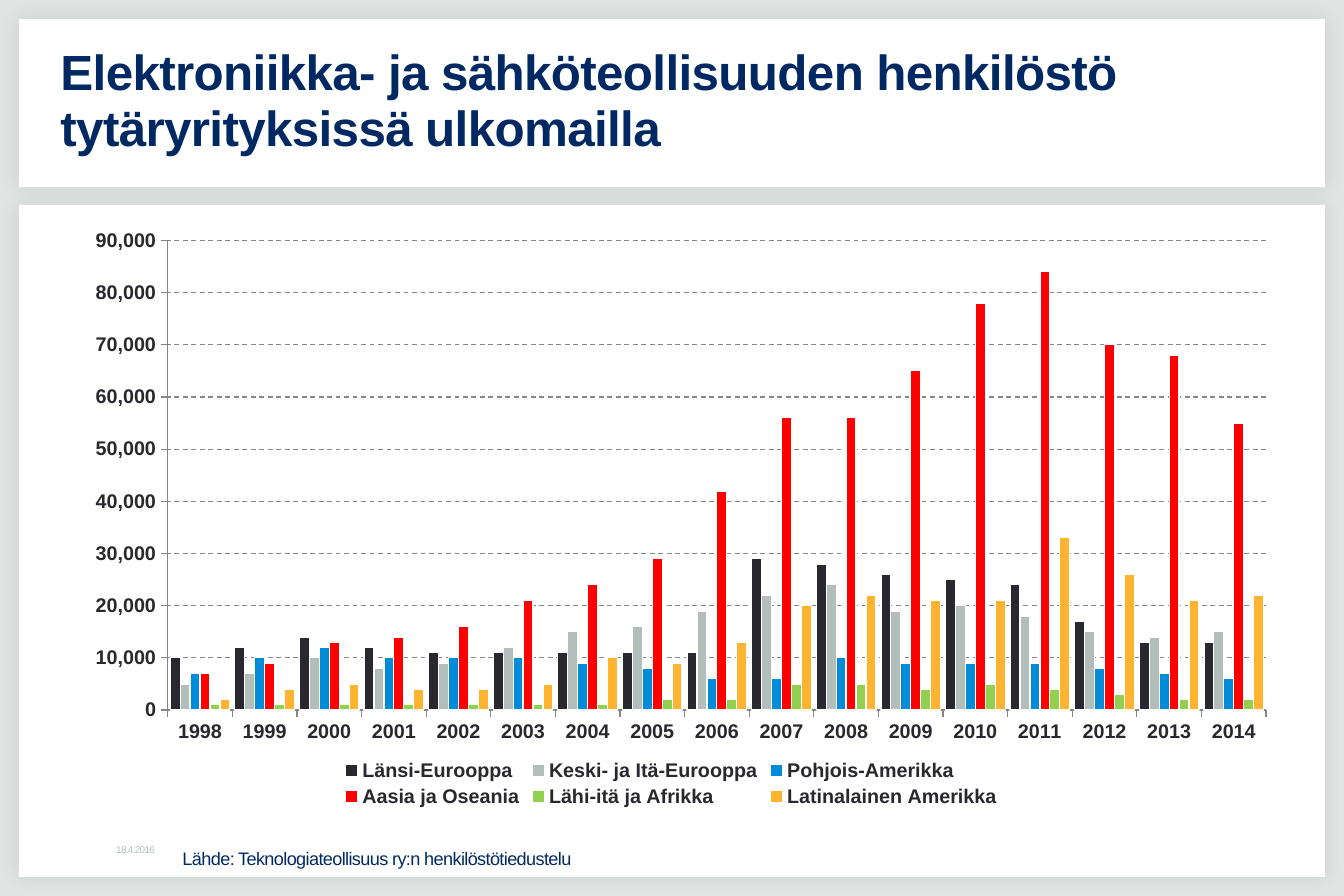
from dataclasses import dataclass

from lxml import etree
from pptx import Presentation
from pptx import util as u
from pptx.chart.data import CategoryChartData
from pptx.dml.color import RGBColor
from pptx.enum import chart as ch, dml, shapes, text
from pptx.oxml import parse_xml
from pptx.oxml.ns import nsdecls, qn

WIDTH, HEIGHT = 11.34, 7.56
MARGIN = 0.16


@dataclass(frozen=True)
class Theme:
    font: str = "Arial"
    backdrop: str = "E0E5E3"
    panel: str = "FFFFFF"
    navy: str = "002964"
    ink: str = "29282E"
    grey: str = "B1BEB9"
    axis: str = "868686"
    title_size: float = 30
    chart_size: float = 12
    source_size: float = 11
    date_size: float = 6
    tracking: int = -40


THEME = Theme()
YEARS = [str(year) for year in range(1998, 2015)]

# Staff in thousands, one value a year
REGIONS = [
    ("Länsi-Eurooppa", THEME.ink,
     [10, 12, 14, 12, 11, 11, 11, 11, 11, 29, 28, 26, 25, 24, 17, 13, 13]),
    ("Keski- ja Itä-Eurooppa", THEME.grey,
     [5, 7, 10, 8, 9, 12, 15, 16, 19, 22, 24, 19, 20, 18, 15, 14, 15]),
    ("Pohjois-Amerikka", "008CD9",
     [7, 10, 12, 10, 10, 10, 9, 8, 6, 6, 10, 9, 9, 9, 8, 7, 6]),
    ("Aasia ja Oseania", "FF0000",
     [7, 9, 13, 14, 16, 21, 24, 29, 42, 56, 56, 65, 78, 84, 70, 68, 55]),
    ("Lähi-itä ja Afrikka", "92D050",
     [1, 1, 1, 1, 1, 1, 1, 2, 2, 5, 5, 4, 5, 4, 3, 2, 2]),
    ("Latinalainen Amerikka", "FFB431",
     [2, 4, 5, 4, 4, 5, 10, 9, 13, 20, 22, 21, 21, 33, 26, 21, 22]),
]


def rgb(code):
    return RGBColor.from_string(code)


def inches(box):
    return [u.Inches(length) for length in box]


def style_font(font, size, color, bold=False):
    font.name, font.size, font.bold = THEME.font, u.Pt(size), bold
    font.color.rgb = rgb(color)


def write(frame, words, size, color, bold=False, insets=(0.04,) * 4):
    frame.word_wrap = True
    frame.auto_size = text.MSO_AUTO_SIZE.NONE
    (frame.margin_left, frame.margin_top,
     frame.margin_right, frame.margin_bottom) = inches(insets)
    frame.text = words
    para = frame.paragraphs[0]
    para.alignment = text.PP_ALIGN.LEFT
    for span in para.runs:
        style_font(span.font, size, color, bold)
        span.font._element.set("spc", str(THEME.tracking))


def add_panel(page, box):
    """Add a white panel with a soft shadow on all sides."""
    panel = page.shapes.add_shape(shapes.MSO_SHAPE.RECTANGLE, *inches(box))
    panel.fill.solid()
    panel.fill.fore_color.rgb = rgb(THEME.panel)
    panel.line.fill.background()
    panel.shadow.inherit = False
    effects = panel._element.spPr.find(qn("a:effectLst"))
    effects.append(parse_xml(
        f'<a:outerShdw {nsdecls("a")} blurRad="127000" dist="0" dir="2700000" algn="ctr" '
        'rotWithShape="0"><a:srgbClr val="000000"><a:alpha val="10000"/></a:srgbClr>'
        '</a:outerShdw>'))


def add_header(page, box):
    add_panel(page, box)
    left, top, width, height = box
    title = page.shapes.title
    page.shapes._spTree.append(title._element)  # bring in front of the panel
    title.left, title.top, title.width, title.height = inches(
        (left + 0.31, top + 0.15, width - 0.62, height - 0.32))
    frame = title.text_frame
    write(frame, "Elektroniikka- ja sähköteollisuuden henkilöstö tytäryrityksissä ulkomailla",
          THEME.title_size, THEME.navy, True, (0.04, 0.05, 0.1, 0.05))
    frame.vertical_anchor = text.MSO_ANCHOR.MIDDLE
    frame.paragraphs[0].line_spacing = 0.95


def place_plot(chart, x, y, width, height):
    """Fix the inner plot area as shares of the chart."""
    plot_area = chart._chartSpace.chart.plotArea
    for old in plot_area.findall(qn("c:layout")):
        plot_area.remove(old)
    layout = etree.Element(qn("c:layout"))
    manual = etree.SubElement(layout, qn("c:manualLayout"))
    settings = (("layoutTarget", "inner"), ("xMode", "edge"), ("yMode", "edge"),
                ("x", x), ("y", y), ("w", width), ("h", height))
    for name, value in settings:
        etree.SubElement(manual, qn(f"c:{name}")).set("val", str(value))
    plot_area.insert(0, layout)


def style_axes(chart):
    for axis in (chart.category_axis, chart.value_axis):
        axis.major_tick_mark = ch.XL_TICK_MARK.OUTSIDE
        axis.minor_tick_mark = ch.XL_TICK_MARK.NONE
        axis.format.line.color.rgb = rgb(THEME.axis)
        axis.format.line.width = u.Pt(0.75)
        style_font(axis.tick_labels.font, THEME.chart_size, THEME.ink, True)
    values = chart.value_axis
    values.minimum_scale, values.maximum_scale, values.major_unit = 0, 90000, 10000
    values.tick_labels.number_format = "#,##0"
    values.tick_labels.number_format_is_linked = False
    grid = values.major_gridlines.format.line
    grid.color.rgb = rgb(THEME.axis)
    grid.width = u.Pt(0.75)
    grid.dash_style = dml.MSO_LINE.DASH


def add_staff_chart(page, box):
    data = CategoryChartData(number_format="#,##0")
    data.categories = YEARS
    for name, _, thousands in REGIONS:
        data.add_series(name, [value * 1000 for value in thousands])
    chart = page.shapes.add_chart(
        ch.XL_CHART_TYPE.COLUMN_CLUSTERED, *inches(box), data).chart
    style_font(chart.font, THEME.chart_size, THEME.ink)
    chart.has_title = False
    chart.has_legend = True
    chart.legend.position = ch.XL_LEGEND_POSITION.BOTTOM
    chart.legend.include_in_layout = False
    style_font(chart.legend.font, THEME.chart_size, THEME.ink, True)
    style_axes(chart)
    plot = chart.plots[0]
    plot.gap_width, plot.overlap, plot.vary_by_categories = 50, 0, False
    for series, (_, color, _) in zip(plot.series, REGIONS):
        series.format.fill.solid()
        series.format.fill.fore_color.rgb = rgb(color)
        series.format.line.color.rgb = rgb(THEME.panel)
        series.format.line.width = u.Pt(0.75)
        series.invert_if_negative = False
    place_plot(chart, 0.091, 0.028, 0.892, 0.799)


def add_body(page, box):
    add_panel(page, box)
    left, top, width, height = box
    bottom = top + height
    add_staff_chart(page, (left + 0.31, top + 0.16, width - 0.63, height - 0.71))
    date = page.shapes.add_textbox(*inches((left + 0.78, bottom - 0.31, 1.42, 0.16)))
    write(date.text_frame, "18.4.2016", THEME.date_size, THEME.grey)
    date.text_frame.vertical_anchor = text.MSO_ANCHOR.MIDDLE
    source = page.shapes.add_textbox(*inches((left + 1.34, bottom - 0.29, 5.67, 0.26)))
    write(source.text_frame, "Lähde: Teknologiateollisuus ry:n henkilöstötiedustelu",
          THEME.source_size, THEME.navy)


def main():
    deck = Presentation()
    deck.slide_width, deck.slide_height = inches((WIDTH, HEIGHT))
    page = deck.slides.add_slide(deck.slide_layouts[5])
    page.background.fill.solid()
    page.background.fill.fore_color.rgb = rgb(THEME.backdrop)
    panel_width, header_height = WIDTH - 2 * MARGIN, 1.42
    body_top = 2 * MARGIN + header_height - 0.01
    add_header(page, (MARGIN, MARGIN, panel_width, header_height))
    add_body(page, (MARGIN, body_top, panel_width, HEIGHT - MARGIN - body_top))
    deck.save("out.pptx")


if __name__ == "__main__":
    main()
